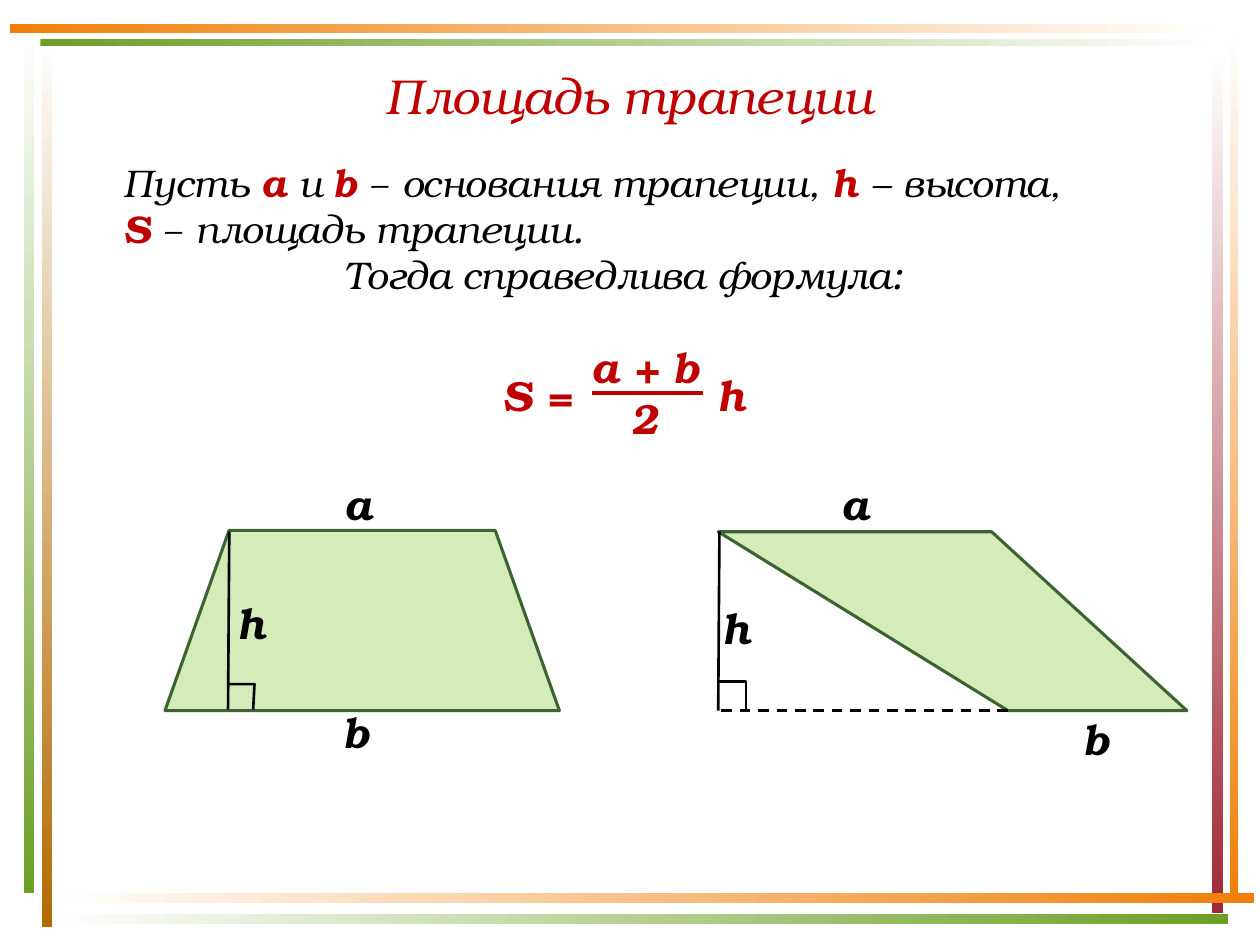
from lxml.etree import SubElement
from pptx import Presentation
from pptx.dml.color import RGBColor
from pptx.enum.dml import MSO_LINE
from pptx.enum.shapes import MSO_CONNECTOR, MSO_SHAPE
from pptx.enum.text import MSO_ANCHOR, MSO_AUTO_SIZE, PP_ALIGN
from pptx.oxml.ns import qn
from pptx.util import Inches, Pt

THEME = {
    "font": "TeX Gyre Bonum", "minus_font": "Vollkorn",
    "red": "C00000", "black": "000000", "fill": "92D050", "edge": "3B6432",
    "orange": "F07F09", "green": "6B9F25", "brown": "B26B02", "wine": "9F2936",
    "white": "FFFFFF",
    "title": 28, "body": 22, "label": 24,
    "edge_width": 1.75, "thin": 1.5, "bar_width": 2.25, "opacity": 40,
}

TITLE = "Площадь трапеции"
MINUS = ("−", {"name": THEME["minus_font"]})


def key(text):
    return text, {"color": "red", "bold": True}


STATEMENT = [
    (PP_ALIGN.JUSTIFY, ["Пусть ", key("а"), " и ", key("b "), MINUS,
                        " основания трапеции, ", key("h "), "– высота, "]),
    (PP_ALIGN.JUSTIFY, [key("S "), MINUS, " площадь трапеции. "]),
    (PP_ALIGN.CENTER, ["Тогда справедлива формула: "]),
]

# left, top, width, height, start colour, end colour
FRAME = [
    (0.33, 0.28, 0.08, 7.08, "white", "brown"),
    (0.19, 0.25, 0.08, 6.84, "white", "green"),
    (9.76, 0.24, 0.07, 6.93, "white", "orange"),
    (9.62, 0.42, 0.09, 6.83, "white", "wine"),
    (0.45, 7.09, 9.5, 0.08, "white", "orange"),
    (0.45, 7.25, 9.3, 0.08, "white", "green"),
    (0.32, 0.31, 9.32, 0.06, "green", "white"),
    (0.08, 0.19, 9.56, 0.07, "orange", "white"),
]

# text, left, top, width, colour
LABELS = [
    ("2", 4.91, 3.07, 0.43, "red"),
    ("a + b", 4.59, 2.66, 1.06, "red"),
    ("a", 2.63, 3.75, 0.43, "black"),
    ("b", 2.63, 5.56, 0.4, "black"),
    ("h", 1.78, 4.69, 0.44, "black"),
    ("a", 6.57, 3.75, 0.43, "black"),
    ("b", 8.5, 5.61, 0.4, "black"),
    ("h", 5.63, 4.73, 0.44, "black"),
]
LABEL_HEIGHT = 0.5

TRAPEZOID = (1.31, 4.21, 3.13, 1.43)
SLANT = 0.356
OBLIQUE_TRAPEZOID = [(5.7, 4.22), (7.87, 4.22), (9.42, 5.64), (8, 5.64)]
RIGHT_ANGLES = [
    [(1.81, 5.43), (2.02, 5.43), (2.01, 5.63)],
    [(5.7, 5.41), (5.92, 5.41), (5.92, 5.65)],
]
# start, end, colour, width, dash
LINES = [
    ((1.82, 4.22), (1.81, 5.63), "black", "thin", None),
    ((5.71, 4.22), (5.7, 5.64), "black", "thin", None),
    ((8, 5.64), (5.7, 5.64), "black", "thin", MSO_LINE.DASH),
    ((4.7, 3.12), (5.58, 3.12), "red", "bar_width", None),
]


def rgb(name):
    return RGBColor.from_string(THEME[name])


def add_run(paragraph, text, size, color="black", **changes):
    run = paragraph.add_run()
    run.text = text
    formats = {"name": THEME["font"], "size": Pt(THEME[size]), "bold": False, "italic": True}
    for attribute, value in {**formats, **changes}.items():
        setattr(run.font, attribute, value)
    run.font.color.rgb = rgb(color)


def add_text(shapes, box, wrap=True):
    frame = shapes.add_textbox(*map(Inches, box)).text_frame
    frame.word_wrap = wrap
    frame.auto_size = MSO_AUTO_SIZE.SHAPE_TO_FIT_TEXT
    return frame


def outline(shape, color, width):
    shape.line.color.rgb = rgb(color)
    shape.line.width = Pt(THEME[width])


def style_figure(shape):
    """Give a trapezoid its translucent fill and dark edge."""
    shape.shadow.inherit = False
    shape.fill.solid()
    shape.fill.fore_color.rgb = rgb("fill")
    color = shape.fill._xPr.find(qn("a:solidFill"))[0]
    SubElement(color, qn("a:alpha"), val=str(THEME["opacity"] * 1000))
    outline(shape, "edge", "edge_width")


def add_path_shape(shapes, points, close):
    start, *rest = [tuple(map(Inches, point)) for point in points]
    builder = shapes.build_freeform(*start)
    builder.add_line_segments(rest, close=close)
    return builder.convert_to_shape()


def add_frame(shapes):
    for left, top, width, height, *colors in FRAME:
        bar = shapes.add_shape(MSO_SHAPE.RECTANGLE, *map(Inches, (left, top, width, height)))
        bar.shadow.inherit = False
        bar.line.fill.background()
        bar.fill.gradient()
        bar.fill.gradient_angle = 270 if height > width else 0
        for stop, color in zip(bar.fill.gradient_stops, colors):
            stop.color.rgb = rgb(color)


def add_title(title):
    title.left, title.top, title.width, title.height = map(Inches, (0.62, 0.44, 8.75, 0.62))
    frame = title.text_frame
    frame.vertical_anchor = MSO_ANCHOR.MIDDLE
    frame.paragraphs[0].alignment = PP_ALIGN.CENTER
    add_run(frame.paragraphs[0], TITLE, "title", "red")


def add_statement(shapes):
    frame = add_text(shapes, (0.88, 1.21, 8.24, 1.21))
    for index, (alignment, pieces) in enumerate(STATEMENT):
        paragraph = frame.add_paragraph() if index else frame.paragraphs[0]
        paragraph.alignment = alignment
        for piece in pieces:
            text, changes = (piece, {}) if isinstance(piece, str) else piece
            add_run(paragraph, text, "body", **changes)


def add_formula(shapes):
    """Write the formula with a tab stop that leaves room for the fraction."""
    paragraph = add_text(shapes, (3.89, 2.88, 2.16, LABEL_HEIGHT)).paragraphs[0]
    stops = SubElement(paragraph._p.get_or_add_pPr(), qn("a:tabLst"))
    SubElement(stops, qn("a:tab"), pos=str(Inches(1.7)), algn="l")
    add_run(paragraph, "S =\th", "label", "red", bold=True)


def add_figures(shapes):
    trapezoid = shapes.add_shape(MSO_SHAPE.TRAPEZOID, *map(Inches, TRAPEZOID))
    trapezoid.adjustments[0] = SLANT
    style_figure(trapezoid)
    style_figure(add_path_shape(shapes, OBLIQUE_TRAPEZOID, close=True))
    for points in RIGHT_ANGLES:
        mark = add_path_shape(shapes, points, close=False)
        mark.shadow.inherit = False
        mark.fill.background()
        outline(mark, "black", "thin")
    for start, end, color, width, dash in LINES:
        line = shapes.add_connector(MSO_CONNECTOR.STRAIGHT, *map(Inches, start + end))
        outline(line, color, width)
        if dash:
            line.line.dash_style = dash
        SubElement(line._element.spPr, qn("a:effectLst"))


def main():
    deck = Presentation()
    deck.slide_width, deck.slide_height = Inches(10), Inches(7.5)
    slide = deck.slides.add_slide(deck.slide_layouts[5])
    shapes = slide.shapes
    add_frame(shapes)
    add_title(shapes.title)
    add_statement(shapes)
    add_figures(shapes)
    add_formula(shapes)
    for text, left, top, width, color in LABELS:
        label = add_text(shapes, (left, top, width, LABEL_HEIGHT), wrap=False)
        add_run(label.paragraphs[0], text, "label", color, bold=True)
    deck.save("out.pptx")


if __name__ == "__main__":
    main()
